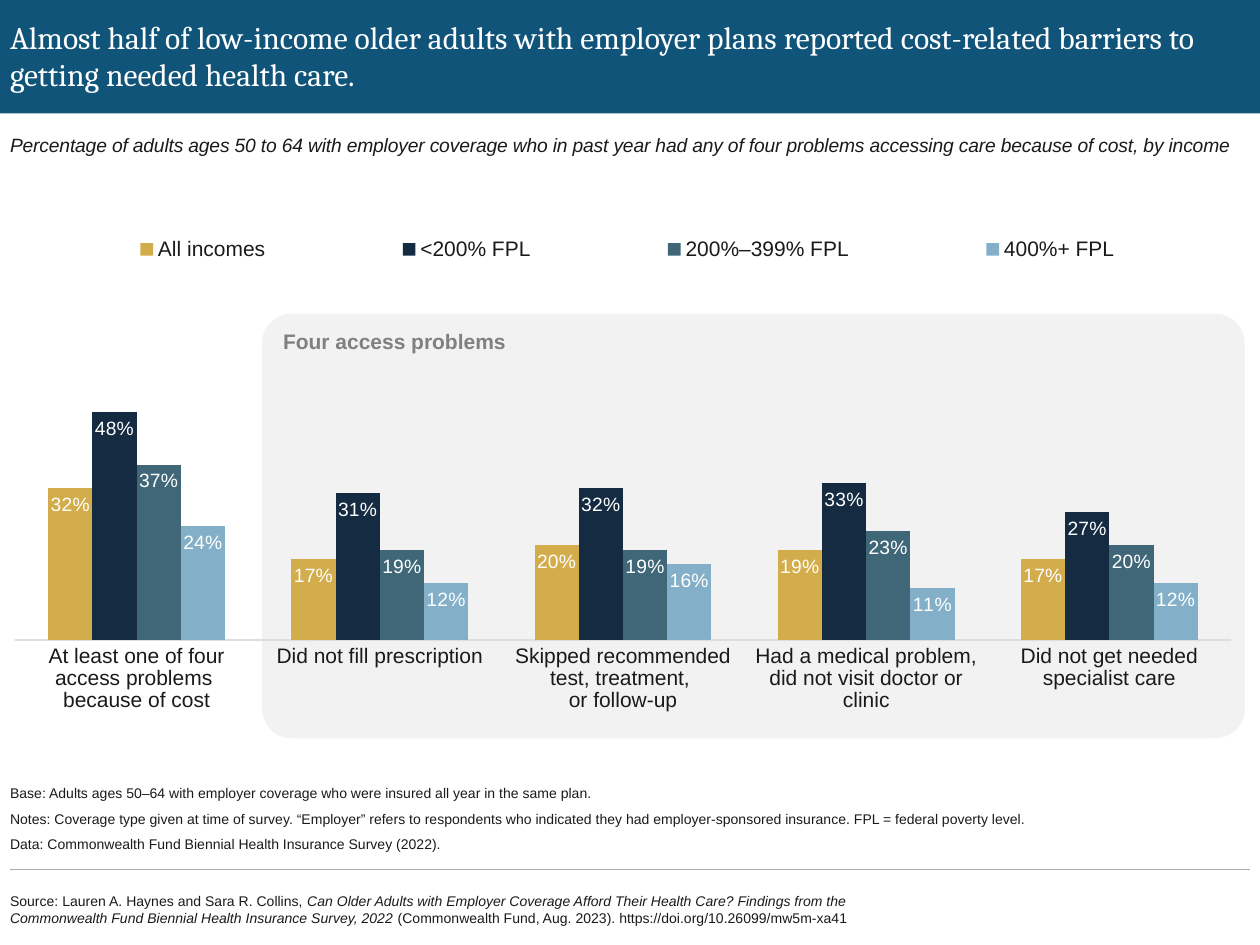
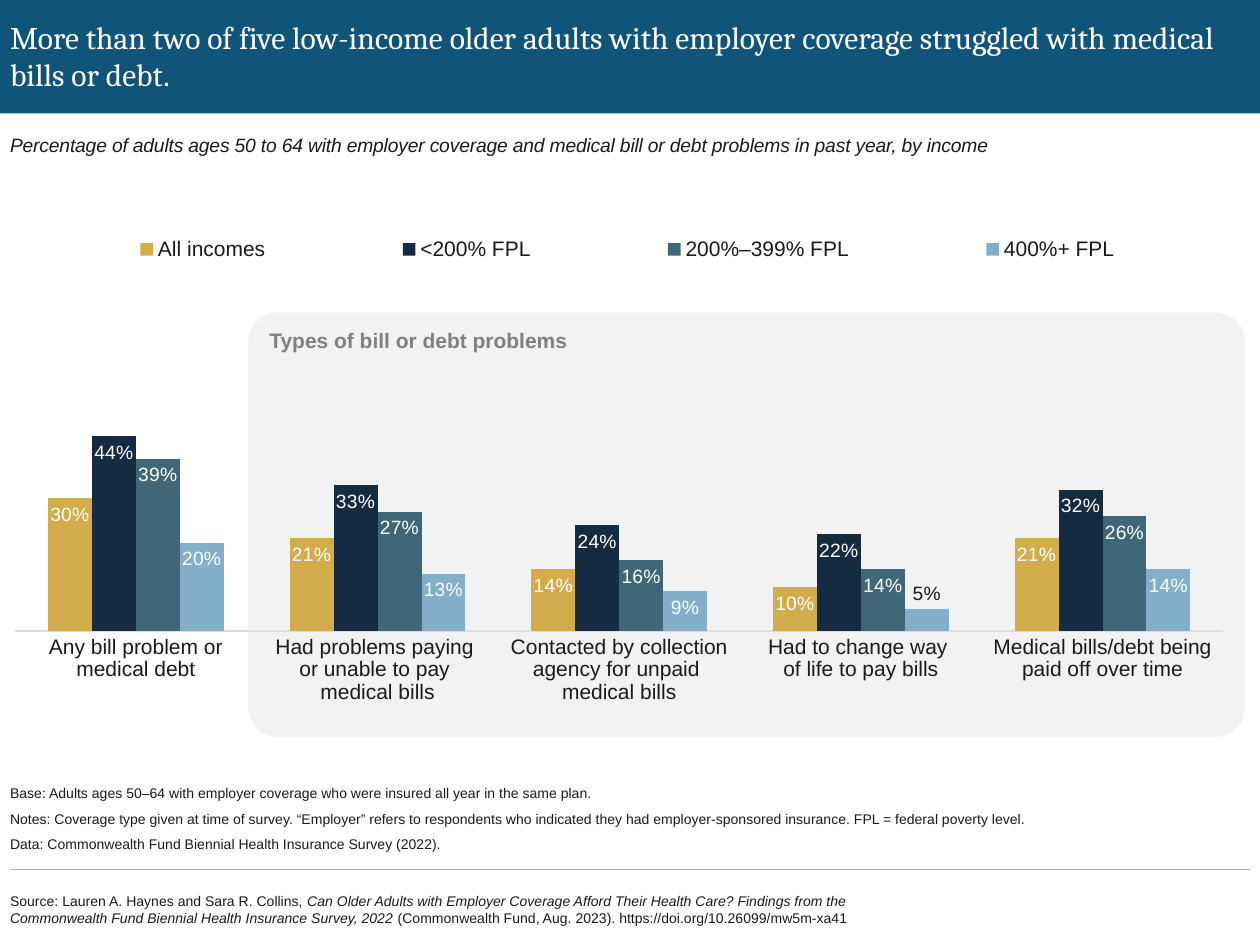
from dataclasses import dataclass

from lxml.etree import SubElement as Sub
from pptx import Presentation as Deck
from pptx.chart.data import CategoryChartData as Data
from pptx.dml.color import RGBColor as Rgb
from pptx.enum.chart import XL_CHART_TYPE as Kind
from pptx.enum.chart import XL_LABEL_POSITION as Spot
from pptx.enum.chart import XL_LEGEND_POSITION as Side
from pptx.enum.chart import XL_TICK_MARK as Tick
from pptx.enum.shapes import MSO_CONNECTOR as Link
from pptx.enum.shapes import MSO_SHAPE as Form
from pptx.enum.text import MSO_ANCHOR as Anchor
from pptx.enum.text import PP_ALIGN as Align
from pptx.oxml.ns import qn
from pptx.util import Inches, Pt


@dataclass(frozen=True)
class Theme:
    """Colours, fonts and sizes that the slides share."""

    band: str = "115479"
    ink: str = "1A1A1A"
    white: str = "FFFFFF"
    panel: str = "F2F2F2"
    muted: str = "808080"
    rule: str = "ABABAB"
    axis: str = "DDDDDD"
    bars: tuple = ("D3AC4C", "142B41", "3F6777", "83B0C8")
    serif: str = "Cambria"
    sans: str = "Arial"
    title: int = 18
    head: int = 12
    body: int = 11
    note: int = 8
    left: float = 0.08
    wide: float = 9.84


T = Theme()
GROUPS = ("All incomes", "<200% FPL", "200%–399% FPL", "400%+ FPL")
NOTES = (
    "Base: Adults ages 50–64 with employer coverage who were insured all year in the same plan.",
    "Notes: Coverage type given at time of survey. “Employer” refers to respondents who "
    "indicated they had employer-sponsored insurance. FPL = federal poverty level.",
    "Data: Commonwealth Fund Biennial Health Insurance Survey (2022).",
)
SOURCE = (
    (("Source: Lauren A. Haynes and Sara R. Collins, ", False),
     ("Can Older Adults with Employer Coverage Afford Their Health Care? Findings from the ", True)),
    (("Commonwealth Fund Biennial Health Insurance Survey, 2022", True),
     (" (Commonwealth Fund, Aug. 2023). https://doi.org/10.26099/mw5m-xa41", False)),
)
PAGES = (
    dict(
        title="Almost half of low-income older adults with employer plans reported "
              "cost-related barriers to getting needed health care.",
        lead="Percentage of adults ages 50 to 64 with employer coverage who in past year had "
             "any of four problems accessing care because of cost, by income",
        label="Four access problems",
        panel=(2.08, 2.49, 7.8, 3.37),
        frame=(T.left, 1.38, T.wide, 4.8),
        plot=(0.12, 2.07, 9.65, 3.01),
        cats=("At least one of four access problems \nbecause of cost",
              "Did not fill prescription",
              "Skipped recommended test, treatment, \nor follow-up",
              "Had a medical problem, did not visit doctor or clinic",
              "Did not get needed specialist care"),
        rows=((0.32, 0.17, 0.2, 0.19, 0.17),
              (0.48, 0.31, 0.32, 0.33, 0.27),
              (0.37, 0.19, 0.19, 0.23, 0.2),
              (0.24, 0.12, 0.16, 0.11, 0.12)),
    ),
    dict(
        title="More than two of five low-income older adults with employer coverage "
              "struggled with medical bills or debt.",
        lead="Percentage of adults ages 50 to 64 with employer coverage and medical bill or "
             "debt problems in past year, by income",
        label="Types of bill or debt problems",
        panel=(1.97, 2.48, 7.91, 3.37),
        frame=(T.left, 1.56, T.wide, 4.8),
        plot=(0.12, 2.2, 9.59, 2.81),
        cats=("Any bill problem or medical debt",
              "Had problems paying \nor unable to pay \nmedical bills",
              "Contacted by collection agency for unpaid \nmedical bills",
              "Had to change way \nof life to pay bills",
              "Medical bills/debt being paid off over time"),
        rows=((0.3, 0.21, 0.14, 0.1, 0.21),
              (0.44, 0.33, 0.24, 0.22, 0.32),
              (0.39, 0.27, 0.16, 0.14, 0.26),
              (0.2, 0.13, 0.09, 0.05, 0.14)),
    ),
)


def place(box):
    """Turn a box in inches into lengths."""
    return [Inches(side) for side in box]


def style(font, size, color=T.ink, name=T.sans, bold=False, slant=False):
    """Set the look of a font."""
    font.size, font.name, font.bold, font.italic = Pt(size), name, bold, slant
    font.color.rgb = Rgb.from_string(color)


def add_block(slide, form, box, color):
    """Add a filled shape with no line."""
    block = slide.shapes.add_shape(form, *place(box))
    block.shadow.inherit = False
    block.fill.solid()
    block.fill.fore_color.rgb = Rgb.from_string(color)
    block.line.fill.background()
    return block


def add_text(slide, box, text, size, anchor=Anchor.TOP, **look):
    """Add a wrapped text box without margins."""
    frame = slide.shapes.add_textbox(*place(box)).text_frame
    frame.word_wrap = True
    frame.vertical_anchor = anchor
    frame.margin_left = frame.margin_right = frame.margin_top = frame.margin_bottom = 0
    frame.text = text
    for para in frame.paragraphs:
        for run in para.runs:
            style(run.font, size, **look)
    return frame


def add_rule(slide, y):
    """Add the thin line above the source."""
    ends = place((T.left + T.wide, y, T.left, y))
    rule = slide.shapes.add_connector(Link.STRAIGHT, *ends)
    rule.line.color.rgb = Rgb.from_string(T.rule)
    rule.line.width = Pt(0.75)
    Sub(rule._element.spPr, qn("a:effectLst"))


def add_head(slide, title, lead):
    """Add the band, the title and the lead line."""
    add_block(slide, Form.RECTANGLE, (0, 0, 10, 0.9), T.band)
    add_text(slide, (T.left, -0.01, T.wide, 0.9), title, T.title, Anchor.MIDDLE,
             color=T.white, name=T.serif)
    frame = add_text(slide, (T.left, 1.06, T.wide, 0.32), lead, T.body, slant=True)
    for run in frame.paragraphs[0].runs:
        run._r.get_or_add_rPr().set("spc", "-10")


def add_panel(slide, box, label):
    """Add the rounded panel with its heading."""
    panel = add_block(slide, Form.ROUNDED_RECTANGLE, box, T.panel)
    panel.adjustments[0] = 0.07
    frame = panel.text_frame
    frame.vertical_anchor = Anchor.TOP
    frame.text = label
    para = frame.paragraphs[0]
    para.alignment = Align.LEFT
    style(para.runs[0].font, T.head, T.muted, bold=True)


def add_foot(slide):
    """Add the notes, the rule and the source."""
    notes = add_text(slide, (T.left, 6.23, T.wide, 0.54), "\n".join(NOTES), T.note,
                     Anchor.BOTTOM)
    for para in notes.paragraphs:
        para.line_spacing = 0.9
        para.space_after = Pt(6)
    add_rule(slide, 6.9)
    para = add_text(slide, (T.left, 6.99, 7.8, 0.46), "", T.note, Anchor.MIDDLE).paragraphs[0]
    for row, parts in enumerate(SOURCE):
        if row:
            para.add_line_break()
        for text, slant in parts:
            run = para.add_run()
            run.text = text
            style(run.font, T.note, slant=slant)


def set_layout(part, index, box, frame, inner=False):
    """Pin a chart part to a box given in slide inches."""
    for old in part.findall(qn("c:layout")):
        part.remove(old)
    layout = part.makeelement(qn("c:layout"))
    part.insert(index, layout)
    manual = Sub(layout, qn("c:manualLayout"))
    left, top, wide, high = frame
    x, y, w, h = box
    marks = [("layoutTarget", "inner")] if inner else []
    marks += [("xMode", "edge"), ("yMode", "edge"), ("x", (x - left) / wide),
              ("y", (y - top) / high), ("w", w / wide), ("h", h / high)]
    for tag, val in marks:
        Sub(manual, qn(f"c:{tag}")).set("val", str(val))


def add_bars(slide, cats, rows, frame, plot):
    """Add the clustered columns with legend and labels."""
    data = Data(number_format="0%")
    data.categories = cats
    for name, vals in zip(GROUPS, rows):
        data.add_series(name, vals)
    chart = slide.shapes.add_chart(Kind.COLUMN_CLUSTERED, *place(frame), data).chart
    style(chart.font, 10)
    chart.has_title = False
    set_axes(chart)
    chart.has_legend = True
    legend = chart.legend
    legend.position = Side.RIGHT
    legend.include_in_layout = False
    style(legend.font, T.head)
    set_layout(legend._element, 1, (T.left, 1.74, 9.8, 0.48), frame)
    set_layout(chart._chartSpace.chart.plotArea, 0, plot, frame, True)
    group = chart.plots[0]
    group.gap_width, group.overlap, group.vary_by_categories = 150, 0, False
    for bars, color, vals in zip(group.series, T.bars, rows):
        paint(bars, color, vals)


def set_axes(chart):
    """Style the category axis and hide the value axis."""
    axis = chart.category_axis
    axis.major_tick_mark = axis.minor_tick_mark = Tick.NONE
    axis.format.line.color.rgb = Rgb.from_string(T.axis)
    axis.format.line.width = Pt(0.75)
    style(axis.tick_labels.font, T.head)
    scale = chart.value_axis
    scale.minimum_scale, scale.maximum_scale = 0, 0.8
    scale.has_major_gridlines = False
    scale.visible = False


def paint(bars, color, vals):
    """Fill one series and label it, with short bars labelled above."""
    bars.format.fill.solid()
    bars.format.fill.fore_color.rgb = Rgb.from_string(color)
    bars.invert_if_negative = False
    labels = bars.data_labels
    labels.show_value = True
    labels.number_format, labels.number_format_is_linked = "0%", False
    labels.position = Spot.INSIDE_END
    style(labels.font, T.body, T.white)
    for index, val in enumerate(vals):
        if val <= 0.05:
            label = bars.points[index].data_label
            style(label.font, T.body)
            label.position = Spot.OUTSIDE_END


def main():
    """Build the slides and save them."""
    deck = Deck()
    deck.slide_width, deck.slide_height = Inches(10), Inches(7.5)
    for page in PAGES:
        slide = deck.slides.add_slide(deck.slide_layouts[6])
        add_panel(slide, page["panel"], page["label"])
        add_bars(slide, page["cats"], page["rows"], page["frame"], page["plot"])
        add_head(slide, page["title"], page["lead"])
        add_foot(slide)
    deck.save("out.pptx")


if __name__ == "__main__":
    main()
